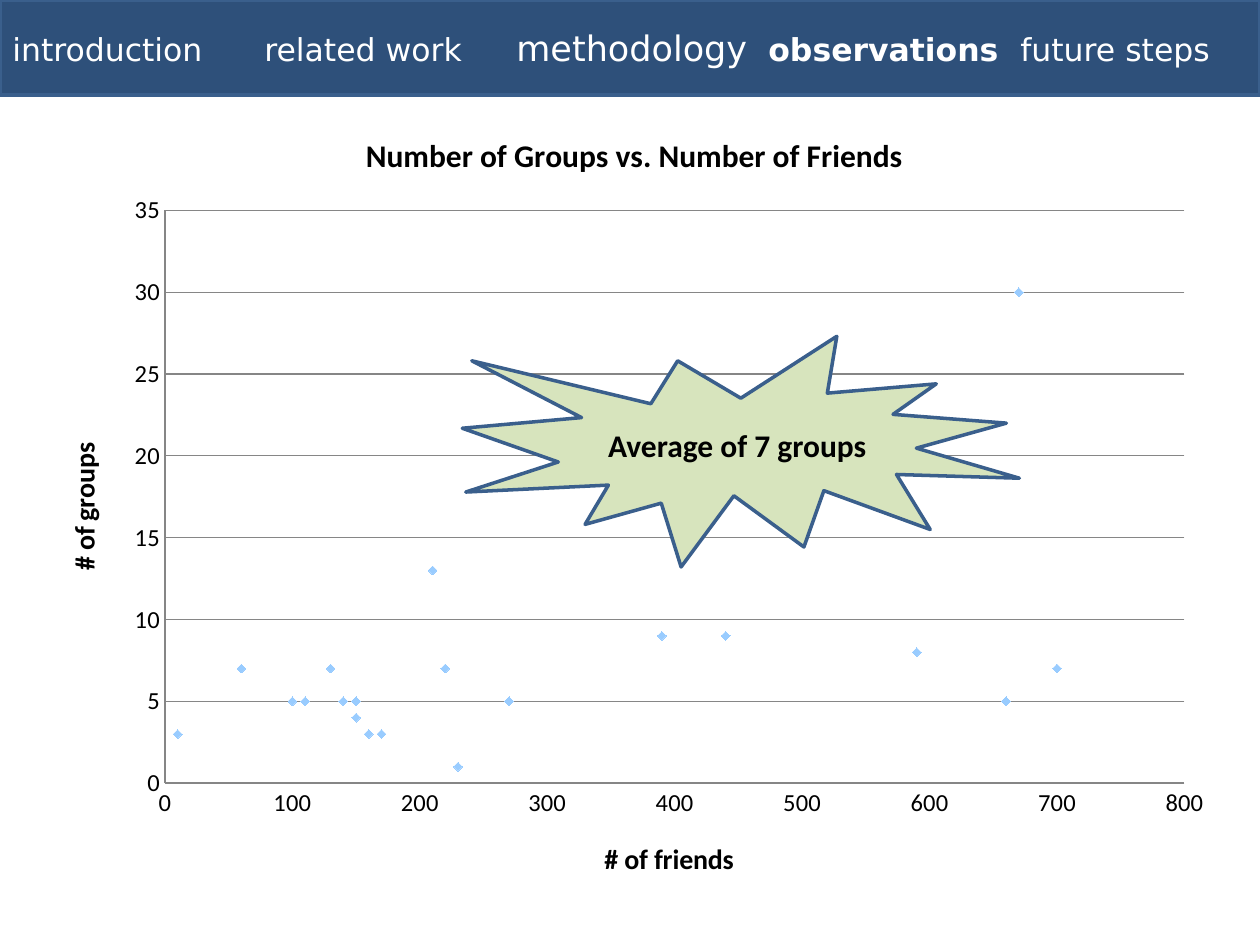
from lxml import etree
from pptx import Presentation
from pptx import util as u
from pptx.chart.data import XyChartData
from pptx.dml.color import RGBColor
from pptx.enum import chart as charts, shapes, text
from pptx.oxml import ns

WHITE = RGBColor(0xFF, 0xFF, 0xFF)
BLACK = RGBColor(0, 0, 0)
NAVY = RGBColor(0x2E, 0x50, 0x7A)
OUTLINE = RGBColor(0x3A, 0x5F, 0x8C)
PALE_GREEN = RGBColor(0xD7, 0xE4, 0xBD)
SKY = RGBColor(0x99, 0xCC, 0xFF)
GREY = RGBColor(0x86, 0x86, 0x86)

FRIENDS = [590, 130, 440, 100, 660, 110, 220, 670, 700, 390,
           60, 230, 170, 150, 140, 150, 270, 10, 160, 210]
GROUPS = [8, 7, 9, 5, 5, 5, 7, 30, 7, 9, 7, 1, 3, 4, 5, 5, 5, 3, 3, 13]


def write(paragraph, words, font="Calibri", size=18, color=BLACK, bold=False):
    """Add a formatted run to a paragraph."""
    run = paragraph.add_run()
    run.text = words
    run.font.name = font
    run.font.size = u.Pt(size)
    run.font.bold = bold
    run.font.color.rgb = color


class SlideBuilder:
    def __init__(self, slide):
        self.slide = slide
        self.line_color = OUTLINE
        self.line_width = u.Pt(2)

    def shape(self, kind, box, fill, align):
        """Add a filled, outlined shape and return its paragraph."""
        shape = self.slide.shapes.add_shape(kind, *map(u.Cm, box))
        shape.shadow.inherit = False
        shape.fill.solid()
        shape.fill.fore_color.rgb = fill
        shape.line.color.rgb = self.line_color
        shape.line.width = self.line_width
        frame = shape.text_frame
        frame.word_wrap = True
        frame.vertical_anchor = text.MSO_ANCHOR.MIDDLE
        frame.paragraphs[0].alignment = align
        return frame.paragraphs[0]

    def axis(self, axis, title, maximum, step):
        axis.minimum_scale, axis.maximum_scale = 0, maximum
        axis.major_unit = step
        axis.major_tick_mark = axis.minor_tick_mark = charts.XL_TICK_MARK.NONE
        axis.tick_labels.font.size = u.Pt(14)
        axis.format.line.color.rgb = GREY
        write(axis.axis_title.text_frame.paragraphs[0], title, size=16, bold=True)

    def scatter(self, box, title, points, plot_area):
        data = XyChartData()
        series_data = data.add_series("Series 1")
        for x, y in points:
            series_data.add_data_point(x, y)
        chart = self.slide.shapes.add_chart(
            charts.XL_CHART_TYPE.XY_SCATTER, *map(u.Cm, box), data).chart
        chart.has_legend = False
        chart.font.name = "Calibri"
        chart.font.size = u.Pt(10)
        chart.font.color.rgb = BLACK
        write(chart.chart_title.text_frame.paragraphs[0], title, bold=True)

        # Axes and gridlines
        self.axis(chart.category_axis, "# of friends", 800, 100)
        self.axis(chart.value_axis, "# of groups", 35, 5)
        chart.category_axis.has_major_gridlines = False
        chart.value_axis.has_major_gridlines = True
        chart.value_axis.major_gridlines.format.line.color.rgb = GREY

        # Markers only
        chart.plots[0].vary_by_categories = False
        series = chart.plots[0].series[0]
        series.smooth = False
        series.format.line.fill.background()
        series.marker.style = charts.XL_MARKER_STYLE.DIAMOND
        series.marker.size = 5
        series.marker.format.fill.solid()
        series.marker.format.fill.fore_color.rgb = SKY
        series.marker.format.line.fill.background()
        self.place_plot(chart, plot_area)

    def place_plot(self, chart, fractions):
        """Fix the inner plot area as fractions of the chart."""
        plot = chart._chartSpace.chart.plotArea
        for old in plot.findall(ns.qn("c:layout")):
            plot.remove(old)
        layout = etree.Element(ns.qn("c:layout"))
        manual = etree.SubElement(layout, ns.qn("c:manualLayout"))
        settings = [("layoutTarget", "inner"), ("xMode", "edge"), ("yMode", "edge")]
        settings += zip("xywh", map(str, fractions))
        for tag, value in settings:
            etree.SubElement(manual, ns.qn(f"c:{tag}")).set("val", value)
        plot.insert(0, layout)


def main():
    deck = Presentation()
    deck.slide_width, deck.slide_height = u.Cm(25.4), u.Cm(19.05)
    builder = SlideBuilder(deck.slides.add_slide(deck.slide_layouts[6]))

    # Navigation bar, spaced by the default tab stops
    navigation = builder.shape(shapes.MSO_SHAPE.RECTANGLE, (0, 0, 25.4, 1.92),
                               NAVY, text.PP_ALIGN.LEFT)
    for words, size, bold in [("introduction\trelated work\t", 18, False),
                              ("methodology\t", 20, False),
                              ("observations", 18, True),
                              ("\tfuture steps", 18, False)]:
        write(navigation, words, "DejaVu Sans", size, WHITE, bold)

    # Groups against friends
    builder.scatter((0.84, 2.11, 23.9, 16.15),
                    "Number of Groups vs. Number of Friends",
                    zip(FRIENDS, GROUPS), (0.104, 0.132, 0.86, 0.715))

    # Callout with the average
    average = builder.shape(shapes.MSO_SHAPE.EXPLOSION1, (9.32, 6.78, 11.23, 4.65),
                            PALE_GREEN, text.PP_ALIGN.CENTER)
    write(average, "Average of 7 groups", bold=True)

    deck.save("out.pptx")


if __name__ == "__main__":
    main()
